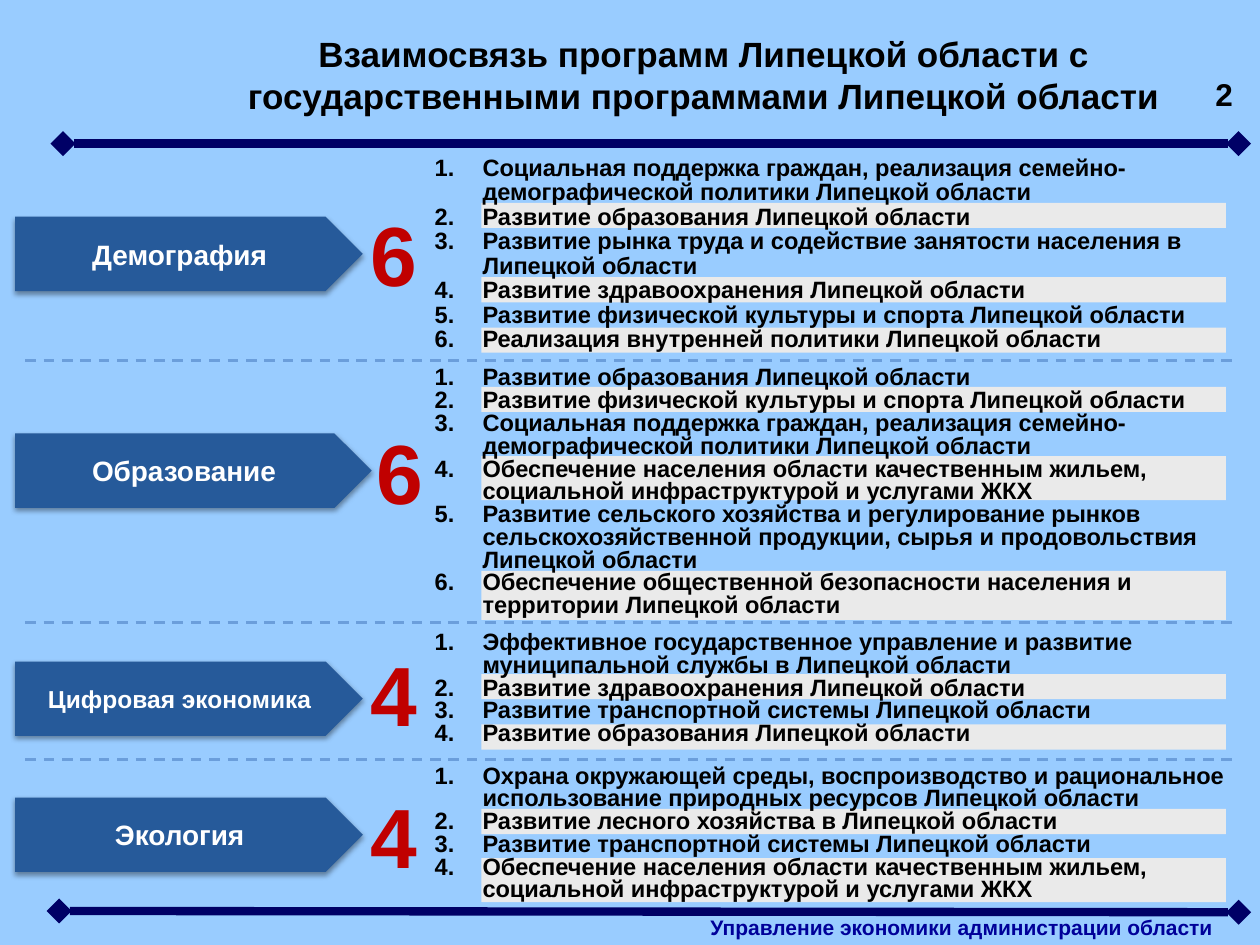
from dataclasses import dataclass

from lxml.etree import SubElement
from pptx import Presentation
from pptx.dml.color import RGBColor
from pptx.enum.dml import MSO_LINE
from pptx.enum.shapes import MSO_CONNECTOR as Connector
from pptx.enum.shapes import MSO_SHAPE as Preset
from pptx.enum.text import MSO_ANCHOR as Anchor
from pptx.enum.text import MSO_AUTO_SIZE as AutoSize
from pptx.enum.text import PP_ALIGN as Align
from pptx.oxml.ns import qn
from pptx.util import Inches, Pt


@dataclass(frozen=True)
class Theme:
    font: str = "Arial"
    background: str = "99CCFF"
    rule: str = "000066"
    footer: str = "000099"
    text: str = "000000"
    band: str = "EAEAEA"
    arrow: str = "265A9A"
    arrow_text: str = "FFFFFF"
    count: str = "C00000"
    divider: str = "6B9EDB"
    title_size: float = 20
    number_size: float = 18
    label_size: float = 16
    list_size: float = 13.5
    footer_size: float = 12
    count_size: float = 48


@dataclass
class Section:
    label: str
    arrow_top: float
    count_top: float
    list_top: float
    list_height: float
    bands: list  # top and height behind every second item
    items: list
    label_size: float = Theme.label_size
    arrow_width: float = 2.76
    count_left: float = 2.56
    count_width: float = 1.13
    line_spacing: float = 13


class SlideBuilder:
    def __init__(self, slide, theme):
        self.slide = slide
        self.theme = theme
        fill = slide.background.fill
        fill.solid()
        fill.fore_color.rgb = RGBColor.from_string(theme.background)

    def place(self, shape, left, top, width, height):
        shape.left, shape.top = Inches(left), Inches(top)
        shape.width, shape.height = Inches(width), Inches(height)

    def prepare(self, frame, anchor=Anchor.TOP):
        frame.word_wrap = True
        frame.auto_size = AutoSize.NONE
        frame.vertical_anchor = anchor
        return frame

    def add_run(self, paragraph, text, size, color):
        run = paragraph.add_run()
        run.text = text
        run.font.name = self.theme.font
        run.font.size = Pt(size)
        run.font.bold = True
        run.font.color.rgb = RGBColor.from_string(color)

    def bring_forward(self, shape):
        shape.element.getparent().append(shape.element)

    def title(self, text, *box):
        shape = self.slide.shapes.title
        self.bring_forward(shape)
        self.place(shape, *box)
        paragraph = self.prepare(shape.text_frame).paragraphs[0]
        paragraph.alignment = Align.CENTER
        self.add_run(paragraph, text, self.theme.title_size, self.theme.text)

    def text(self, text, size, color, *box, align=Align.CENTER):
        shape = self.slide.shapes.add_textbox(*map(Inches, box))
        paragraph = self.prepare(shape.text_frame).paragraphs[0]
        paragraph.alignment = align
        self.add_run(paragraph, text, size, color)

    def numbered_list(self, shape, items, line_spacing, *box):
        self.bring_forward(shape)
        self.place(shape, *box)
        frame = self.prepare(shape.text_frame)
        for index, item in enumerate(items):
            paragraph = frame.add_paragraph() if index else frame.paragraphs[0]
            properties = paragraph._p.get_or_add_pPr()
            properties.set("marL", str(Inches(0.38)))
            properties.set("indent", str(-Inches(0.38)))
            SubElement(properties, qn("a:buFont"), typeface="+mj-lt")
            SubElement(properties, qn("a:buAutoNum"), type="arabicPeriod")
            paragraph.alignment = Align.LEFT
            paragraph.line_spacing = Pt(line_spacing)
            paragraph.space_before = Pt(0)
            self.add_run(paragraph, item, self.theme.list_size, self.theme.text)

    def block(self, preset, color, *box):
        shape = self.slide.shapes.add_shape(preset, *map(Inches, box))
        shape.shadow.inherit = False
        shape.fill.solid()
        shape.fill.fore_color.rgb = RGBColor.from_string(color)
        shape.line.fill.background()
        return shape

    def arrow_label(self, text, size, *box):
        shape = self.block(Preset.PENTAGON, self.theme.arrow, *box)
        effects = shape.element.spPr.find(qn("a:effectLst"))
        shadow = SubElement(effects, qn("a:outerShdw"), blurRad=str(Pt(3.1)),
                            dist=str(Pt(1.6)), dir="5400000", rotWithShape="0")
        color = SubElement(shadow, qn("a:srgbClr"), val="000000")
        SubElement(color, qn("a:alpha"), val="38000")
        paragraph = self.prepare(shape.text_frame, Anchor.MIDDLE).paragraphs[0]
        paragraph.alignment = Align.CENTER
        self.add_run(paragraph, text, size, self.theme.arrow_text)

    def line(self, color, width, *ends):
        connector = self.slide.shapes.add_connector(
            Connector.STRAIGHT, *map(Inches, ends))
        connector.line.color.rgb = RGBColor.from_string(color)
        connector.line.width = Pt(width)
        SubElement(connector.element.spPr, qn("a:effectLst"))
        return connector

    def diamond_rule(self, *ends):
        connector = self.line(self.theme.rule, 4.75, *ends)
        outline = connector.line._get_or_add_ln()
        for end in ("a:headEnd", "a:tailEnd"):
            SubElement(outline, qn(end), type="diamond")

    def divider(self, top):
        connector = self.line(self.theme.divider, 1.5, 0.2, top, 9.84, top)
        connector.line.dash_style = MSO_LINE.DASH

    def section(self, section, placeholder):
        for top, height in section.bands:
            self.block(Preset.RECTANGLE, self.theme.band, 3.82, top, 5.91, height)
        self.numbered_list(placeholder, section.items, section.line_spacing,
                           3.35, section.list_top, 6.61, section.list_height)
        self.arrow_label(section.label, section.label_size,
                         0.12, section.arrow_top, section.arrow_width, 0.59)
        self.text(str(len(section.items)), self.theme.count_size, self.theme.count,
                  section.count_left, section.count_top, section.count_width, 0.91)


# Programmes that occur in several sections
EDUCATION = "Развитие образования Липецкой области"
HEALTH = "Развитие здравоохранения Липецкой области"
SPORT = "Развитие физической культуры и спорта Липецкой области"
TRANSPORT = "Развитие транспортной системы Липецкой области"
SOCIAL = ("Социальная поддержка граждан, реализация "
          "семейно-демографической политики Липецкой области")
HOUSING = ("Обеспечение населения области качественным жильем, "
           "социальной инфраструктурой и услугами ЖКХ")

SECTIONS = [
    Section("Демография", 1.72, 1.56, 1.19, 1.67,
            [(1.61, 0.2), (2.2, 0.2), (2.6, 0.2)],
            [SOCIAL, EDUCATION,
             "Развитие рынка труда и содействие занятости населения в Липецкой области",
             HEALTH, SPORT, "Реализация внутренней политики Липецкой области"],
            line_spacing=14),
    Section("Образование", 3.44, 3.29, 2.87, 2.11,
            [(3.07, 0.2), (3.62, 0.35), (4.53, 0.39)],
            [EDUCATION, SPORT, SOCIAL, HOUSING,
             "Развитие сельского хозяйства и регулирование рынков "
             "сельскохозяйственной продукции, сырья и продовольствия Липецкой области",
             "Обеспечение общественной безопасности населения и "
             "территории Липецкой области"],
            arrow_width=2.83, count_left=2.59, count_width=1.16),
    Section("Цифровая экономика", 5.25, 5.05, 4.97, 1.38,
            [(5.35, 0.2), (5.75, 0.2)],
            ["Эффективное государственное управление и развитие "
             "муниципальной службы в Липецкой области",
             HEALTH, TRANSPORT, EDUCATION],
            label_size=14),
    Section("Экология", 6.33, 6.18, 6.03, 1.38,
            [(6.42, 0.2), (6.81, 0.35)],
            ["Охрана окружающей среды, воспроизводство и рациональное "
             "использование природных ресурсов Липецкой области",
             "Развитие лесного хозяйства в Липецкой области",
             TRANSPORT, HOUSING]),
]


def main():
    presentation = Presentation()
    presentation.slide_width, presentation.slide_height = Inches(10), Inches(7.5)
    # The comparison layout has a title and four body placeholders
    slide = presentation.slides.add_slide(presentation.slide_layouts[4])
    bodies = [shape for shape in slide.placeholders
              if shape.placeholder_format.idx > 0]
    theme = Theme()
    builder = SlideBuilder(slide, theme)

    # Frame: rules, footer, title and page number
    builder.diamond_rule(0.5, 1.14, 9.83, 1.14)
    builder.diamond_rule(0.47, 7.23, 9.83, 7.24)
    builder.text("Управление экономики администрации области", theme.footer_size,
                 theme.footer, 5.54, 7.21, 4.25, 0.3, align=Align.LEFT)
    builder.title("Взаимосвязь программ Липецкой области с "
                  "государственными программами Липецкой области",
                  1.46, 0.21, 8.25, 0.77)
    builder.text("2", theme.number_size, theme.text, 9.44, 0.55, 0.55, 0.4)

    # Sections and the dashed lines between them
    for section, body in zip(SECTIONS, bodies):
        builder.section(section, body)
    for top in (2.86, 4.94, 6.03):
        builder.divider(top)

    presentation.save("out.pptx")


if __name__ == "__main__":
    main()
